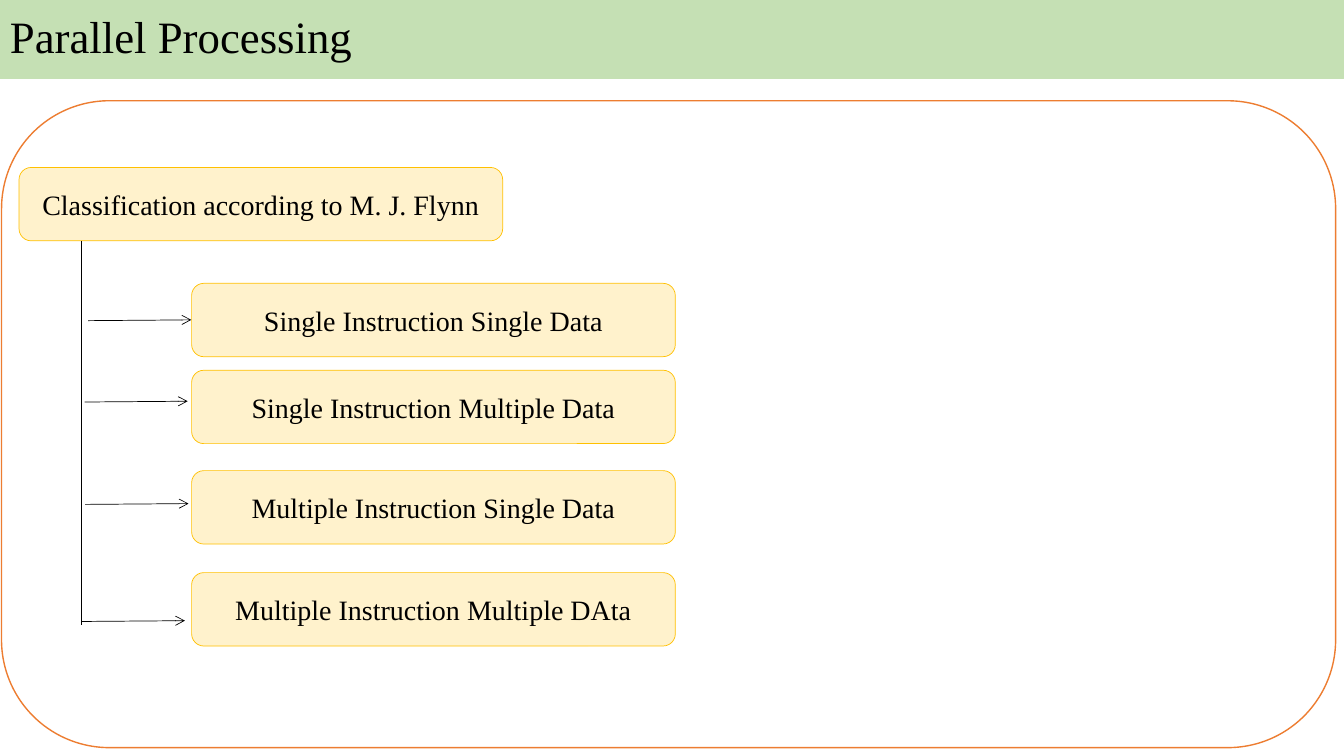
from dataclasses import dataclass

from lxml.etree import SubElement
from pptx import Presentation
from pptx.dml.color import RGBColor
from pptx.enum.shapes import MSO_CONNECTOR, MSO_SHAPE
from pptx.enum.text import MSO_ANCHOR, PP_ALIGN
from pptx.oxml.ns import qn
from pptx.slide import Slide
from pptx.util import Cm, Pt


@dataclass(frozen=True)
class Theme:
    face: str = "Times New Roman"
    ink: str = "000000"
    green: str = "C5E0B4"
    white: str = "FFFFFF"
    orange: str = "ED7D31"
    cream: str = "FFF2CC"
    gold: str = "FFC000"
    title: int = 32
    label: int = 20
    hair: float = 0.5


@dataclass(frozen=True)
class Box:
    left: float
    top: float
    width: float
    height: float
    fill: str
    edge: str
    weight: float
    form: MSO_SHAPE = MSO_SHAPE.FLOWCHART_ALTERNATE_PROCESS
    text: str = ""
    size: int = 20
    align: PP_ALIGN = PP_ALIGN.CENTER
    space: float = 1.0


@dataclass(frozen=True)
class Line:
    left: float
    top: float
    right: float
    base: float
    head: bool = False


@dataclass(frozen=True)
class Branch:
    text: str
    top: float
    start: float
    level: float
    rise: float = 0.02


THEME = Theme()
WIDE, HIGH = 33.87, 19.05
NODE_W, NODE_H, NODE_X = 12.19, 1.85, 4.83
ROOT_X, ROOT_Y = 0.48, 4.22
STEM_X, STEM_END = 2.06, 15.75
REACH = 2.6

BRANCHES = [
    Branch("Single Instruction Single Data", 7.14, 2.22, 8.08),
    Branch("Single Instruction Multiple Data", 9.33, 2.13, 10.13),
    Branch("Multiple Instruction Single Data", 11.86, 2.15, 12.71),
    Branch("Multiple Instruction Multiple DAta", 14.43, STEM_X, 15.66),
]


def apply(target: object, values: dict) -> None:
    for name, value in values.items():
        setattr(target, name, value)


def color(code: str) -> RGBColor:
    return RGBColor.from_string(code)


def draw_box(slide: Slide, box: Box) -> None:
    shape = slide.shapes.add_shape(
        box.form, Cm(box.left), Cm(box.top), Cm(box.width), Cm(box.height)
    )
    shape.shadow.inherit = False
    shape.fill.solid()
    shape.fill.fore_color.rgb = color(box.fill)
    shape.line.color.rgb = color(box.edge)
    shape.line.width = Pt(box.weight)
    if not box.text:
        return
    frame = shape.text_frame
    apply(frame, {"word_wrap": True, "vertical_anchor": MSO_ANCHOR.MIDDLE})
    part = frame.paragraphs[0]
    apply(part, {"alignment": box.align, "line_spacing": box.space})
    run = part.add_run()
    run.text = box.text
    apply(run.font, {"name": THEME.face, "size": Pt(box.size)})
    run.font.color.rgb = color(THEME.ink)


def draw_line(slide: Slide, line: Line) -> None:
    link = slide.shapes.add_connector(
        MSO_CONNECTOR.STRAIGHT,
        Cm(line.left), Cm(line.top), Cm(line.right), Cm(line.base),
    )
    link.line.color.rgb = color(THEME.ink)
    link.line.width = Pt(THEME.hair)
    if line.head:
        SubElement(link.line._get_or_add_ln(), qn("a:tailEnd")).set("type", "arrow")
    SubElement(link._element.spPr, qn("a:effectLst"))


def node(text: str, left: float, top: float) -> Box:
    return Box(left, top, NODE_W, NODE_H, THEME.cream, THEME.gold, THEME.hair,
               text=text, size=THEME.label)


def main() -> None:
    deck = Presentation()
    apply(deck, {"slide_width": Cm(WIDE), "slide_height": Cm(HIGH)})
    slide = deck.slides.add_slide(deck.slide_layouts[6])
    boxes = [
        Box(0, 0, WIDE, 1.98, THEME.green, THEME.green, 0.75, MSO_SHAPE.RECTANGLE,
            "Parallel Processing", THEME.title, PP_ALIGN.LEFT, 0.9),
        Box(0.04, 2.54, 33.62, 16.3, THEME.white, THEME.orange, 1),
        node("Classification according to M. J. Flynn", ROOT_X, ROOT_Y),
        *(node(item.text, NODE_X, item.top) for item in BRANCHES),
    ]
    lines = [
        Line(STEM_X, ROOT_Y + NODE_H, STEM_X, STEM_END),
        *(Line(item.start, item.level, item.start + REACH, item.level - item.rise, True)
          for item in BRANCHES),
    ]
    for box in boxes:
        draw_box(slide, box)
    for line in lines:
        draw_line(slide, line)
    deck.save("out.pptx")


if __name__ == "__main__":
    main()
